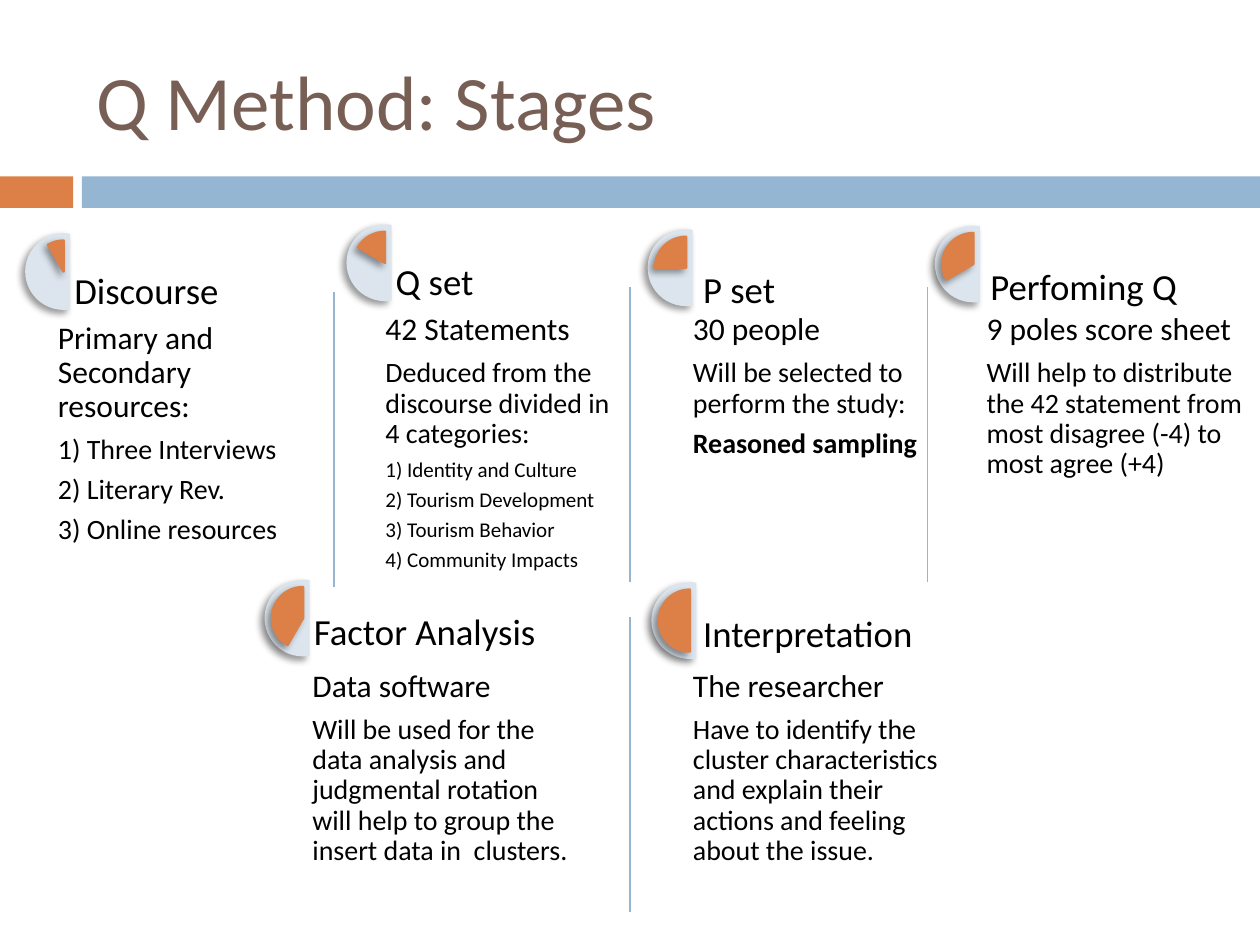
from lxml.etree import SubElement
from pptx import Presentation
from pptx.dml.color import RGBColor
from pptx.enum.shapes import MSO_CONNECTOR, MSO_SHAPE
from pptx.enum.text import MSO_ANCHOR, PP_ALIGN
from pptx.oxml.ns import qn
from pptx.util import Inches, Pt

HUES = {"title": "775F55", "text": "000000", "accent": "DD8047",
        "bar": "94B6D2", "disc": "DCE5EE"}

STAGES = [
    {"name": "Discourse", "dial": (0.2, 1.85), "head": (0.59, 2.11),
     "body": (0.46, 2.56, 2.05, 2.46),
     "lines": [("Primary and Secondary resources:", 18), ("1) Three Interviews", 16),
               ("2) Literary Rev.", 16), ("3) Online resources", 16)]},
    {"name": "Q set", "dial": (2.75, 1.78), "head": (3.14, 2.04),
     "body": (3.06, 2.49, 1.86, 2.17),
     "lines": [("42 Statements", 18),
               ("Deduced from the discourse divided in 4 categories:", 16),
               ("1) Identity and Culture", 12), ("2) Tourism Development", 12),
               ("3) Tourism Behavior", 12), ("4) Community Impacts", 12)]},
    {"name": "P set", "dial": (5.14, 1.82), "head": (5.58, 2.1),
     "body": (5.5, 2.49, 1.86, 2.22),
     "lines": [("30 people", 18), ("Will be selected to perform the study:", 16),
               ("Reasoned sampling", 16, True)]},
    {"name": "Perfoming Q", "dial": (7.42, 1.79), "head": (7.86, 2.08),
     "body": (7.83, 2.49, 2.13, 2.08),
     "lines": [("9 poles score sheet", 18),
               ("Will help to distribute the 42 statement from most disagree (-4) "
                "to most agree (+4)", 16)]},
    {"name": "Factor Analysis", "dial": (2.1, 4.6), "head": (2.47, 4.82),
     "body": (2.48, 5.32, 2.13, 2.08), "align": PP_ALIGN.RIGHT,
     "lines": [("Data software", 18),
               ("Will be used for the data analysis and judgmental rotation "
                "will help to group the insert data in  clusters.", 16)]},
    {"name": "Interpretation", "dial": (5.17, 4.62), "head": (5.58, 4.83),
     "body": (5.5, 5.32, 2.2, 2.08),
     "lines": [("The researcher", 18),
               ("Have to identify the cluster characteristics and explain their "
                "actions and feeling  about the issue.", 16)]},
]

RULES = [(5, 4.9), (5, 2.28), (2.65, 2.32), (7.36, 2.28)]


def apply(obj, vals):
    for key, val in vals.items():
        setattr(obj, key, val)


class Deck:
    """Holds the style and the current slide, and draws each kind of element."""

    font = "Calibri"
    bare = {"margin_left": 0, "margin_top": 0, "margin_right": 0, "margin_bottom": 0}

    def __init__(self, slide):
        self.slide = slide

    def hue(self, name):
        return RGBColor.from_string(HUES[name])

    def shape(self, kind, box, hue, angles=()):
        item = self.slide.shapes.add_shape(kind, *map(Inches, box))
        item.shadow.inherit = False
        item.fill.solid()
        item.fill.fore_color.rgb = self.hue(hue)
        item.line.fill.background()
        for spot, angle in enumerate(angles):
            item.adjustments[spot] = angle
        return item

    def shade(self, item):
        glow = SubElement(item._element.spPr.find(qn("a:effectLst")), qn("a:outerShdw"),
                          blurRad="50800", dist="38100", dir="8100000", rotWithShape="0")
        tint = SubElement(glow, qn("a:srgbClr"), val="000000")
        SubElement(tint, qn("a:alpha"), val="40000")

    def dial(self, left, top, start):
        disc = self.shape(MSO_SHAPE.CHORD, (left, top, 0.61, 0.61), "disc", (48, 168))
        wedge = self.shape(MSO_SHAPE.PIE, (left + 0.06, top + 0.06, 0.49, 0.49),
                           "accent", (start, 162))
        wedge.line.color.rgb = self.hue("accent")
        wedge.line.width = Pt(1.5)
        for item in (disc, wedge):
            self.shade(item)

    def text(self, box, lines, frame, hue="text", align=PP_ALIGN.LEFT, lead=0.9, gap=0.35):
        area = self.slide.shapes.add_textbox(*map(Inches, box)).text_frame
        apply(area, {"word_wrap": True, **frame})
        for spot, (words, size, *bold) in enumerate(lines):
            para = area.add_paragraph() if spot else area.paragraphs[0]
            apply(para, {"alignment": align, "line_spacing": lead,
                         "space_after": Pt(size * gap)})
            run = para.add_run()
            run.text = words
            apply(run.font, {"name": self.font, "size": Pt(size), "bold": bool(bold)})
            run.font.color.rgb = self.hue(hue)

    def rule(self, left, top):
        ends = map(Inches, (left, top, left, top + 2.34))
        line = self.slide.shapes.add_connector(MSO_CONNECTOR.STRAIGHT, *ends)
        line.line.color.rgb = self.hue("bar")
        line.line.width = Pt(0.79)
        SubElement(line._element.spPr, qn("a:effectLst"))


def main():
    show = Presentation()
    apply(show, {"slide_width": Inches(10), "slide_height": Inches(7.5)})
    deck = Deck(show.slides.add_slide(show.slide_layouts[6]))
    deck.shape(MSO_SHAPE.RECTANGLE, (0, 1.4, 0.58, 0.25), "accent")
    deck.shape(MSO_SHAPE.RECTANGLE, (0.65, 1.4, 9.35, 0.25), "bar")
    deck.text((0.67, 0.25, 8.92, 1.08), [("Q Method: Stages", 44)],
              {"vertical_anchor": MSO_ANCHOR.MIDDLE}, "title", lead=1, gap=0)
    for rank, stage in enumerate(STAGES):
        deck.dial(*stage["dial"], 144 - 18 * rank)
        deck.text((*stage["head"], 1.78, 0.37), [(stage["name"], 21)],
                  {**deck.bare, "vertical_anchor": MSO_ANCHOR.BOTTOM},
                  align=stage.get("align", PP_ALIGN.LEFT))
        deck.text(stage["body"], stage["lines"], deck.bare)
    for spot in RULES:
        deck.rule(*spot)
    show.save("out.pptx")


if __name__ == "__main__":
    main()
